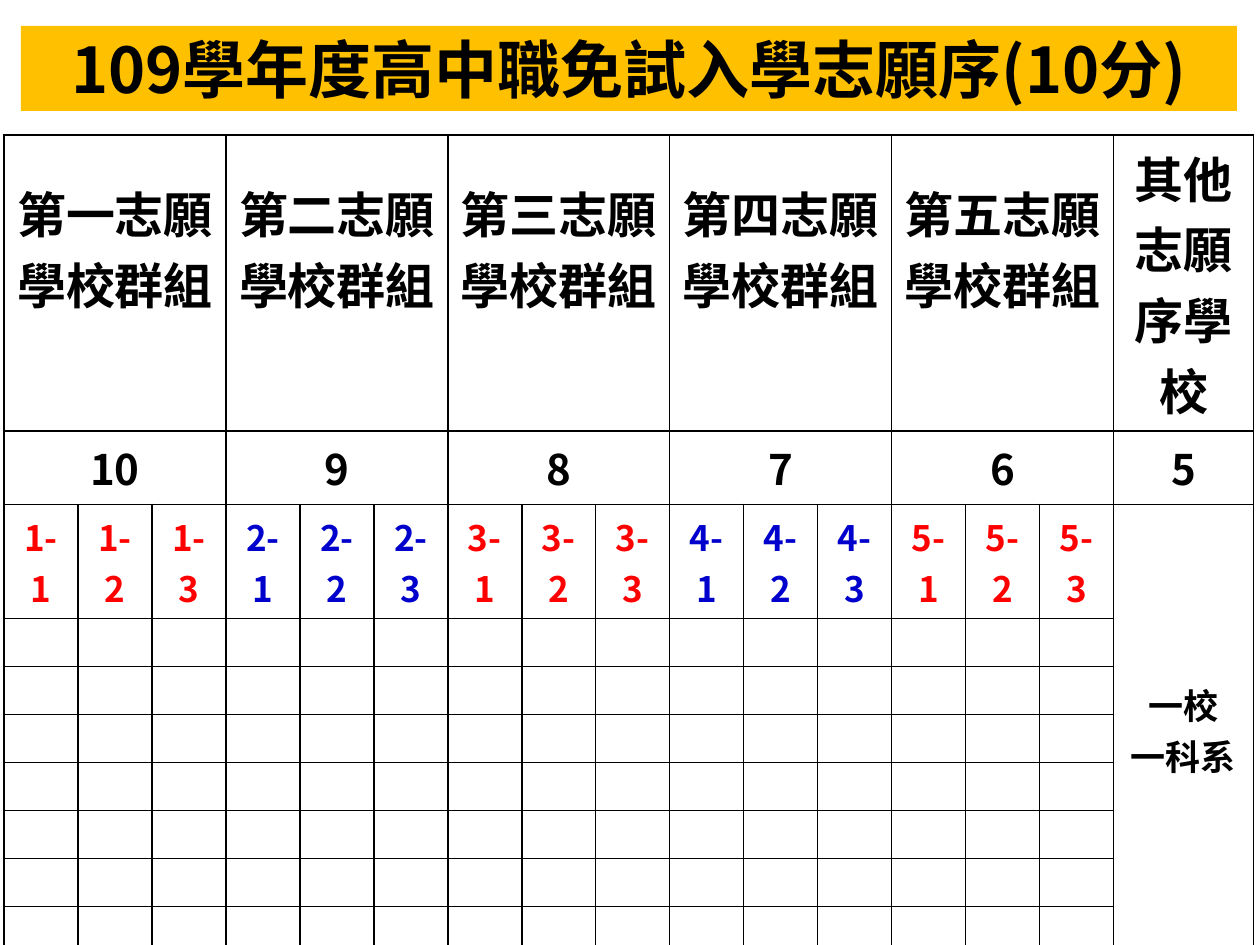
from dataclasses import dataclass

from lxml import etree
from pptx import Presentation
from pptx.dml.color import RGBColor
from pptx.enum.shapes import MSO_SHAPE
from pptx.enum.text import MSO_ANCHOR, PP_ALIGN
from pptx.oxml.ns import qn
from pptx.util import Emu, Pt

RECTANGLE = MSO_SHAPE.RECTANGLE
MIDDLE = MSO_ANCHOR.MIDDLE
CENTER = PP_ALIGN.CENTER


@dataclass(frozen=True)
class Theme:
    font: str = "Noto Sans CJK TC"
    black: str = "000000"
    red: str = "FF0000"
    blue: str = "0000CC"
    banner: str = "FFC000"
    title_size: int = 36
    heading_size: int = 28
    score_size: int = 24
    choice_size: int = 20
    empty_size: int = 12
    border: int = 1


theme = Theme()


def px(length):
    return Emu(round(length * 914400 / 126))


def write(text_frame, text, size, color=theme.black):
    text_frame.text = text
    for paragraph in text_frame.paragraphs:
        paragraph.alignment = CENTER
        paragraph.font.size = Pt(size)
        paragraph.font.bold = True
        paragraph.font.color.rgb = RGBColor.from_string(color)
        paragraph.font.name = theme.font
        latin = paragraph._p.find(".//" + qn("a:latin"))
        east_asian = etree.Element(qn("a:ea"), typeface=theme.font)
        latin.addnext(east_asian)


presentation = Presentation()
presentation.slide_width = px(1260)
presentation.slide_height = px(945)
slide = presentation.slides.add_slide(presentation.slide_layouts[6])

title = slide.shapes.add_shape(RECTANGLE, px(21), px(26), px(1216), px(85))
title.shadow.inherit = False
title.fill.solid()
title.fill.fore_color.rgb = RGBColor.from_string(theme.banner)
title.line.fill.background()
title.text_frame.word_wrap = True
title.text_frame.vertical_anchor = MIDDLE
write(title.text_frame, "109學年度高中職免試入學志願序(10分)", theme.title_size)

column_widths = [74] * 15 + [140]
row_heights = [253, 62, 92] + [48] * 7
table = slide.shapes.add_table(
    len(row_heights), len(column_widths), px(4), px(135),
    px(sum(column_widths)), px(sum(row_heights)),
).table
table.first_row = False
table.horz_banding = False
for column, width in zip(table.columns, column_widths):
    column.width = px(width)
for row, height in zip(table.rows, row_heights):
    row.height = px(height)

for cell in table.iter_cells():
    cell.vertical_anchor = MIDDLE
    properties = cell._tc.get_or_add_tcPr()
    for side in ("a:lnL", "a:lnR", "a:lnT", "a:lnB"):
        line = etree.SubElement(properties, qn(side), w=str(Pt(theme.border)))
        line_fill = etree.SubElement(line, qn("a:solidFill"))
        etree.SubElement(line_fill, qn("a:srgbClr"), val=theme.black)
    cell.fill.background()
    write(cell.text_frame, "", theme.empty_size)

headings = [
    "第一志願\n學校群組",
    "第二志願\n學校群組",
    "第三志願學校群組",
    "第四志願\n學校群組",
    "第五志願\n學校群組",
]
for group, heading in enumerate(headings):
    first = group * 3
    for row in range(2):
        table.cell(row, first).merge(table.cell(row, first + 2))
    heading_cell = table.cell(0, first)
    heading_cell.margin_bottom = px(77)
    write(heading_cell.text_frame, heading, theme.heading_size)
    write(table.cell(1, first).text_frame, str(10 - group), theme.score_size)
    color = theme.blue if group % 2 else theme.red
    for choice in range(3):
        label = f"{group + 1}-{choice + 1}"
        write(table.cell(2, first + choice).text_frame, label, theme.choice_size, color)

table.cell(2, 15).merge(table.cell(9, 15))
write(table.cell(0, 15).text_frame, "其他志願序學校", theme.heading_size)
write(table.cell(1, 15).text_frame, "5", theme.score_size)
write(table.cell(2, 15).text_frame, "一校\n一科系", theme.choice_size)

presentation.save("out.pptx")
